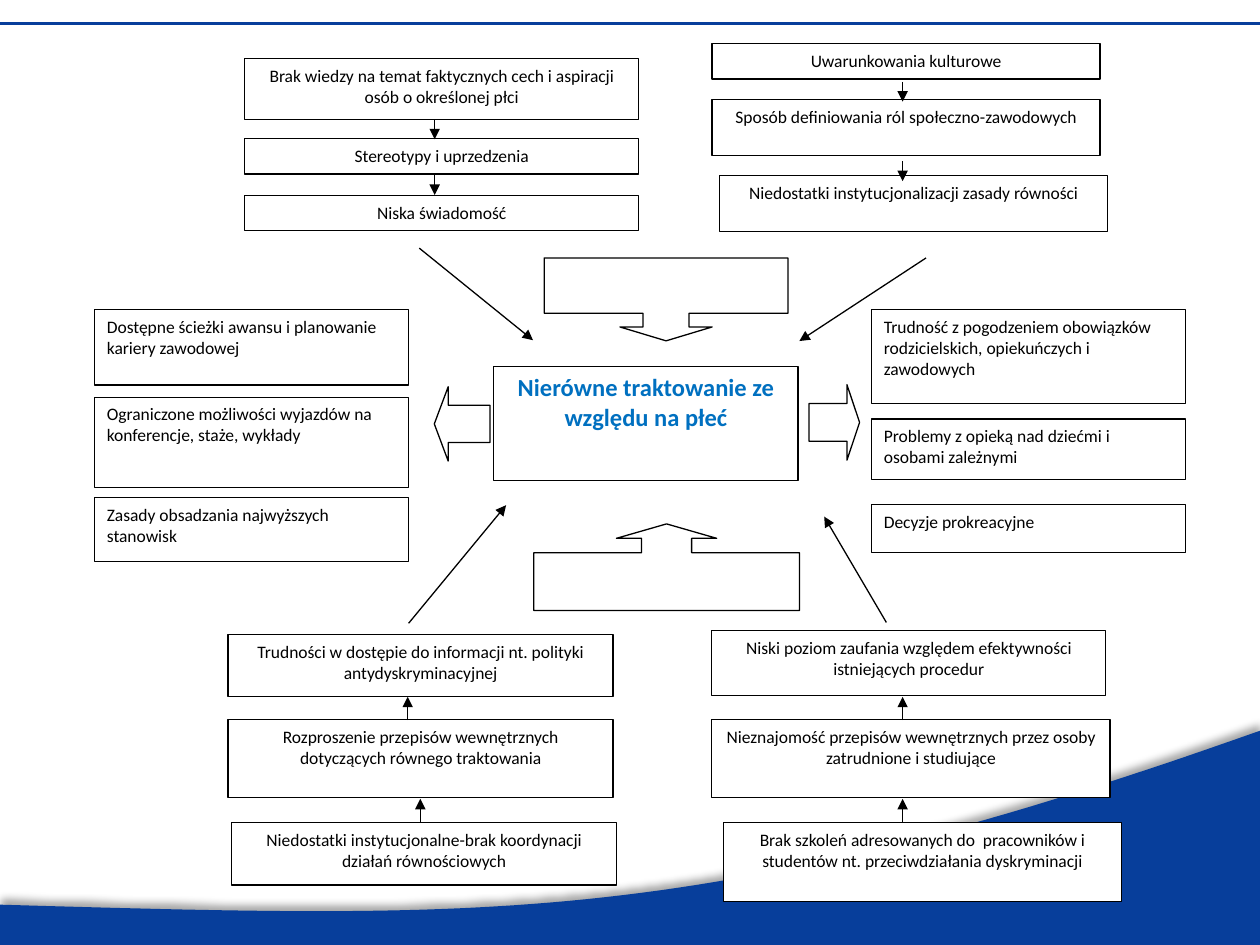
from dataclasses import dataclass

from lxml.etree import SubElement as Sub
from pptx import Presentation
from pptx.dml.color import RGBColor as Rgb
from pptx.enum.shapes import MSO_CONNECTOR as Link, MSO_SHAPE as Kind
from pptx.enum.text import MSO_ANCHOR as Anchor, PP_ALIGN as Align
from pptx.oxml.ns import qn
from pptx.util import Pt


@dataclass(frozen=True)
class Theme:
    font: str = "Calibri"
    body: float = 10
    head: float = 14
    rule: float = 0.75
    ink: Rgb = Rgb(0, 0, 0)
    paper: Rgb = Rgb(255, 255, 255)
    navy: Rgb = Rgb(0x07, 0x3E, 0x9B)
    blue: Rgb = Rgb(0, 0x70, 0xC0)


LOOK = Theme()

# x, width, then (top, height, text)
CENTRED = [
    (139.7, 225.4, [
        (33.5, 34.6, "Brak wiedzy na temat faktycznych cech i aspiracji osób o określonej płci"),
        (79.2, 20.2, "Stereotypy i uprzedzenia"),
        (111.6, 20.2, "Niska świadomość")]),
    (406.8, 221.8, [
        (25, 20.2, "Uwarunkowania kulturowe"),
        (56.9, 32.2, "Sposób definiowania ról społeczno-zawodowych")]),
    (411.1, 221.8, [
        (100.2, 32.2, "Niedostatki instytucjonalizacji zasady równości")]),
    (130.3, 220, [
        (362.6, 35.3, "Trudności w dostępie do informacji nt. polityki antydyskryminacyjnej"),
        (411.1, 44.6, "Rozproszenie przepisów wewnętrznych dotyczących równego traktowania")]),
    (132.3, 220, [
        (470.2, 35.5, "Niedostatki instytucjonalne-brak koordynacji działań równościowych")]),
    (406.8, 225, [
        (360.2, 37.2, "Niski poziom zaufania względem efektywności istniejących procedur"),]),
    (406.8, 227.5, [
        (411.1, 44.6, "Nieznajomość przepisów wewnętrznych przez osoby zatrudnione i studiujące")]),
    (413.3, 227.5, [
        (470.2, 44.8, "Brak szkoleń adresowanych do  pracowników i studentów nt. przeciwdziałania dyskryminacji")]),
]
SIDES = [
    (54, 179.3, [
        (176.9, 43.2, "Dostępne ścieżki awansu i planowanie kariery zawodowej"),
        (227, 51.6, "Ograniczone możliwości wyjazdów na konferencje, staże, wykłady"),
        (284.4, 36.5, "Zasady obsadzania najwyższych stanowisk")]),
    (498, 179.3, [
        (176.9, 53.8, "Trudność z pogodzeniem obowiązków rodzicielskich, opiekuńczych i zawodowych"),
        (239.5, 34.7, "Problemy z opieką nad dziećmi i osobami zależnymi"),
        (288.2, 27.4, "Decyzje prokreacyjne")]),
]
BLOCKS = [
    (Kind.DOWN_ARROW_CALLOUT, 311, 147.4, 139.3, 47.4, (0.556, 0.556, 0.167, 0.667)),
    (Kind.UP_ARROW_CALLOUT, 305, 299.4, 151.8, 49.5, (0.579, 0.579, 0.167, 0.667)),
    (Kind.LEFT_ARROW, 248.2, 221, 31.8, 42.5, (0.5, 0.25)),
    (Kind.RIGHT_ARROW, 462.3, 219.8, 28.9, 43.2, (0.5, 0.25)),
]
ARROWS = [
    (248.4, 68.4, 248.4, 79.6), (248.4, 100.1, 248.4, 111.4),
    (515.8, 46.8, 515.8, 58.1), (515.8, 92.2, 515.8, 103.5),
    (240.2, 470.2, 240.2, 456.5), (233, 411.5, 233, 398.2),
    (515.8, 470.2, 515.8, 456.5), (515.8, 411.5, 515.8, 398.2),
    (233.5, 356.2, 289.2, 288.7), (506.5, 355.7, 471, 295.2),
    (529.2, 147.4, 456.8, 194.9), (239.6, 141.8, 304.6, 194.4),
]


def paint(shape, fill, line=None):
    """Set a flat fill and an optional outline."""
    shape.shadow.inherit = False
    shape.fill.solid()
    shape.fill.fore_color.rgb = fill
    if line is None:
        shape.line.fill.background()
    else:
        shape.line.color.rgb = line
        shape.line.width = Pt(LOOK.rule)


def block(slide, kind, x, y, w, h, adj=()):
    """Add an outlined white shape."""
    shape = slide.shapes.add_shape(kind, Pt(x), Pt(y), Pt(w), Pt(h))
    for i, part in enumerate(adj):
        shape.adjustments[i] = part
    paint(shape, LOOK.paper, LOOK.ink)
    return shape


def box(slide, x, y, w, h, text, align, size=LOOK.body, ink=LOOK.ink, bold=False):
    """Add a text box with a border."""
    frame = block(slide, Kind.RECTANGLE, x, y, w, h).text_frame
    frame.word_wrap = True
    frame.vertical_anchor = Anchor.TOP
    para = frame.paragraphs[0]
    para.text = text
    para.alignment = align
    font = para.font
    font.name, font.size, font.bold = LOOK.font, Pt(size), bold
    font.color.rgb = ink


def stack(slide, x, w, rows, align):
    """Add a column of boxes."""
    for y, h, text in rows:
        box(slide, x, y, w, h, text, align)


def arrow(slide, *ends):
    """Add a line with an arrowhead at its end."""
    line = slide.shapes.add_connector(Link.STRAIGHT, *map(Pt, ends))
    line.line.color.rgb = LOOK.ink
    line.line.width = Pt(LOOK.rule)
    Sub(line.line._get_or_add_ln(), qn("a:tailEnd"), type="triangle")
    Sub(line._element.spPr, qn("a:effectLst"))


def curve(knots, steps=60):
    """Return points along a cubic curve."""
    def at(t, a, b, c, d):
        u = 1 - t
        return u**3 * a + 3 * u * u * t * b + 3 * u * t * t * c + t**3 * d
    return [tuple(Pt(at(i / steps, *axis)) for axis in zip(*knots))
            for i in range(steps + 1)]


def wave(slide):
    """Add the shaded wave at the foot."""
    edge = curve([(720, 417.6), (402.5, 530.6), (281.5, 524.9), (0, 517)])
    pen = slide.shapes.build_freeform(0, Pt(540))
    pen.add_line_segments([(Pt(720), Pt(540)), *edge])
    shape = pen.convert_to_shape()
    paint(shape, LOOK.navy)
    glow = Sub(shape._element.spPr.find(qn("a:effectLst")), qn("a:outerShdw"),
               blurRad=str(Pt(4)), dist=str(Pt(3.5)), dir="16200000",
               algn="b", rotWithShape="0")
    tint = Sub(glow, qn("a:srgbClr"), val=str(LOOK.ink))
    Sub(tint, qn("a:alpha"), val="35000")


def main():
    """Build and save the slide."""
    deck = Presentation()
    deck.slide_width, deck.slide_height = Pt(720), Pt(540)
    slide = deck.slides.add_slide(deck.slide_layouts[6])
    wave(slide)
    band = slide.shapes.add_shape(Kind.RECTANGLE, 0, Pt(12.7), Pt(720), Pt(1.5))
    paint(band, LOOK.navy)
    for group, align in ((CENTRED, Align.CENTER), (SIDES, Align.LEFT)):
        for x, w, rows in group:
            stack(slide, x, w, rows, align)
    box(slide, 282.2, 209.3, 173.9, 65.1, "Nierówne traktowanie ze względu na płeć",
        Align.CENTER, LOOK.head, LOOK.blue, True)
    for item in BLOCKS:
        block(slide, *item)
    for ends in ARROWS:
        arrow(slide, *ends)
    deck.save("out.pptx")


if __name__ == "__main__":
    main()
